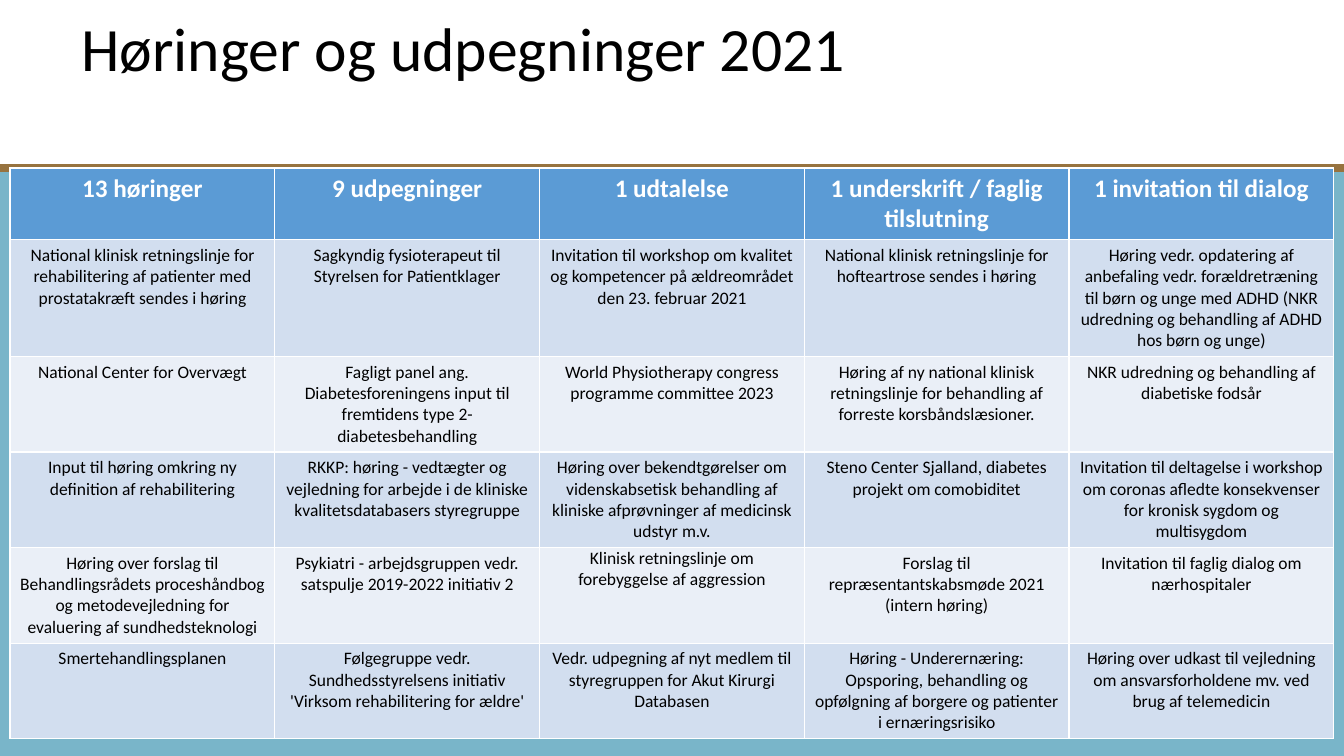
from pptx import Presentation
from pptx.dml.color import RGBColor
from pptx.enum.shapes import MSO_CONNECTOR as CONN, MSO_SHAPE as SHAPE
from pptx.enum.text import MSO_ANCHOR as ANCHOR, PP_ALIGN as ALIGN
from pptx.oxml.ns import qn
from pptx.util import Pt
from lxml.etree import SubElement


def rgb(value):
    return RGBColor.from_string(value)


def set_font(p, size, color, bold=False):
    p.font.name = "Calibri"
    p.font.size = Pt(size)
    p.font.bold = bold
    p.font.color.rgb = rgb(color)


rows = [
    ["13 høringer", "9 udpegninger", "1 udtalelse",
     "1 underskrift / faglig tilslutning", "1 invitation til dialog"],
    ["National klinisk retningslinje for rehabilitering af patienter med prostatakræft sendes i høring",
     "Sagkyndig fysioterapeut til Styrelsen for Patientklager",
     "Invitation til workshop om kvalitet og kompetencer på ældreområdet den 23. februar 2021",
     "National klinisk retningslinje for hofteartrose sendes i høring",
     "Høring vedr. opdatering af anbefaling vedr. forældretræning til børn og unge med ADHD "
     "(NKR udredning og behandling af ADHD hos børn og unge)"],
    ["National Center for Overvægt",
     "Fagligt panel ang. Diabetesforeningens input til fremtidens type 2-diabetesbehandling",
     "World Physiotherapy congress programme committee 2023",
     "Høring af ny national klinisk retningslinje for behandling af forreste korsbåndslæsioner.",
     "NKR udredning og behandling af diabetiske fodsår"],
    ["Input til høring omkring ny definition af rehabilitering",
     "RKKP: høring - vedtægter og vejledning for arbejde i de kliniske kvalitetsdatabasers styregruppe",
     "Høring over bekendtgørelser om videnskabsetisk behandling af kliniske afprøvninger "
     "af medicinsk udstyr m.v.",
     "Steno Center Sjalland, diabetes projekt om comobiditet",
     "Invitation til deltagelse i workshop om coronas afledte konsekvenser for kronisk sygdom "
     "og multisygdom"],
    ["Høring over forslag til Behandlingsrådets proceshåndbog og metodevejledning for "
     "evaluering af sundhedsteknologi",
     "Psykiatri - arbejdsgruppen vedr. satspulje 2019-2022 initiativ 2",
     "Klinisk retningslinje om forebyggelse af aggression",
     "Forslag til repræsentantskabsmøde 2021 (intern høring)",
     "Invitation til faglig dialog om nærhospitaler"],
    ["Smertehandlingsplanen",
     "Følgegruppe vedr. Sundhedsstyrelsens initiativ 'Virksom rehabilitering for ældre'",
     "Vedr. udpegning af nyt medlem til styregruppen for Akut Kirurgi Databasen",
     "Høring - Underernæring: Opsporing, behandling og opfølgning af borgere og patienter "
     "i ernæringsrisiko",
     "Høring over udkast til vejledning om ansvarsforholdene mv. ved brug af telemedicin"],
]
row_heights = [51.2, 83.4] + [68.2] * 4
band_top = 120

prs = Presentation()
prs.slide_width, prs.slide_height = Pt(960), Pt(540)
s = prs.slides.add_slide(prs.slide_layouts[5])

band = s.shapes.add_shape(SHAPE.RECTANGLE, 0, Pt(band_top), Pt(960), Pt(540 - band_top))
band.shadow.inherit = False
band.fill.solid()
band.fill.fore_color.rgb = rgb("79B5C9")
band.line.fill.background()

rule = s.shapes.add_connector(CONN.STRAIGHT, 0, Pt(band_top), Pt(960), Pt(band_top))
rule.line.color.rgb = rgb("97733F")
rule.line.width = Pt(6)
SubElement(rule.line._get_or_add_ln().getparent(), qn("a:effectLst"))

title = s.shapes.title
title.left, title.top, title.width, title.height = Pt(51), Pt(9.4), Pt(828), Pt(104.4)
tf = title.text_frame
tf.text = "Høringer og udpegninger 2021"
tf.word_wrap = True
tf.vertical_anchor = ANCHOR.TOP
p = tf.paragraphs[0]
p.alignment = ALIGN.LEFT
p.line_spacing = 0.9
set_font(p, 44, "000000")

table = s.shapes.add_table(len(rows), len(rows[0]), Pt(7.2), Pt(band_top),
                           Pt(945.5), Pt(sum(row_heights))).table
for col in table.columns:
    col.width = Pt(189.1)
for i, row in enumerate(rows):
    table.rows[i].height = Pt(row_heights[i])
    for j, text in enumerate(row):
        cell = table.cell(i, j)
        cell.fill.solid()
        cell.text = text
        p = cell.text_frame.paragraphs[0]
        p.alignment = ALIGN.CENTER
        if i == 0:
            cell.fill.fore_color.rgb = rgb("5B9BD5")
            set_font(p, 18, "FFFFFF", True)
        else:
            cell.fill.fore_color.rgb = rgb("D2DEEF" if i % 2 else "EAEFF7")
            set_font(p, 12.5, "000000")

aggression = table.cell(4, 2)
aggression.margin_left = aggression.margin_right = Pt(3.6)
aggression.margin_top = aggression.margin_bottom = 0
aggression.text_frame.paragraphs[0].space_after = Pt(8)

prs.save("out.pptx")
